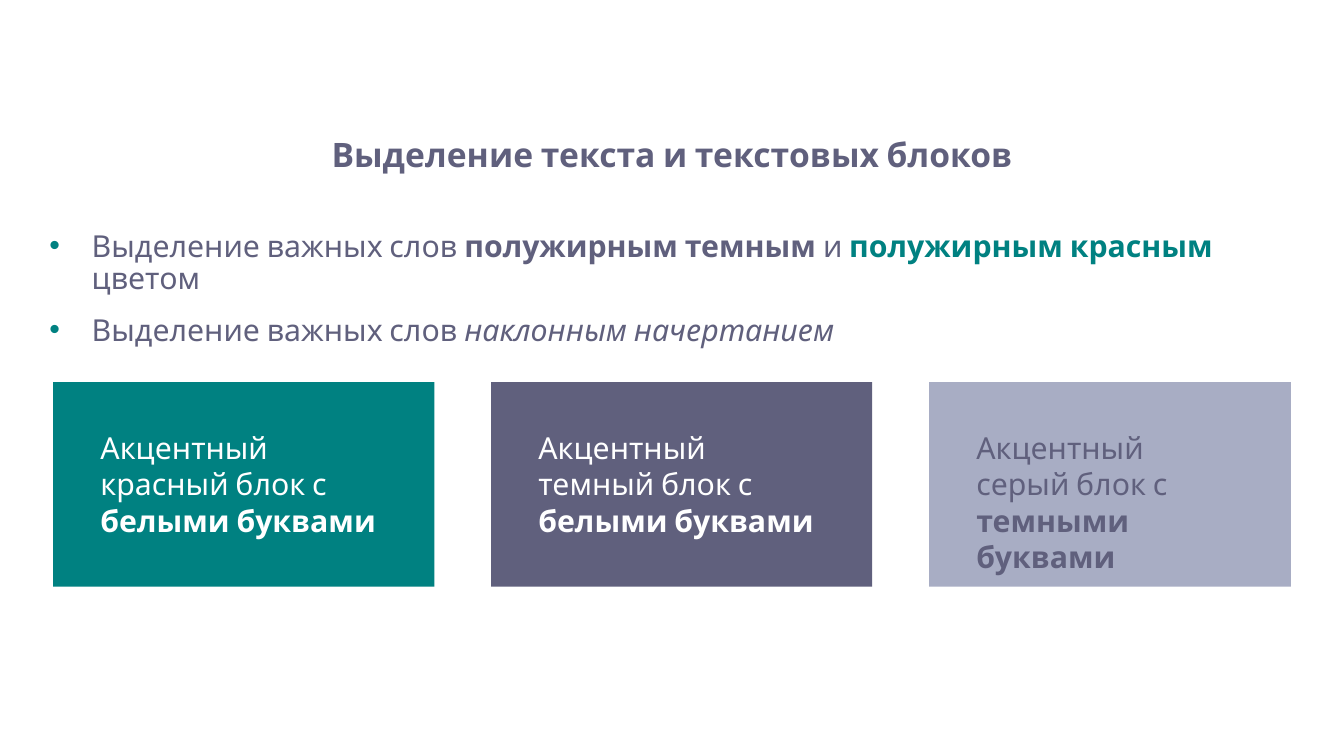
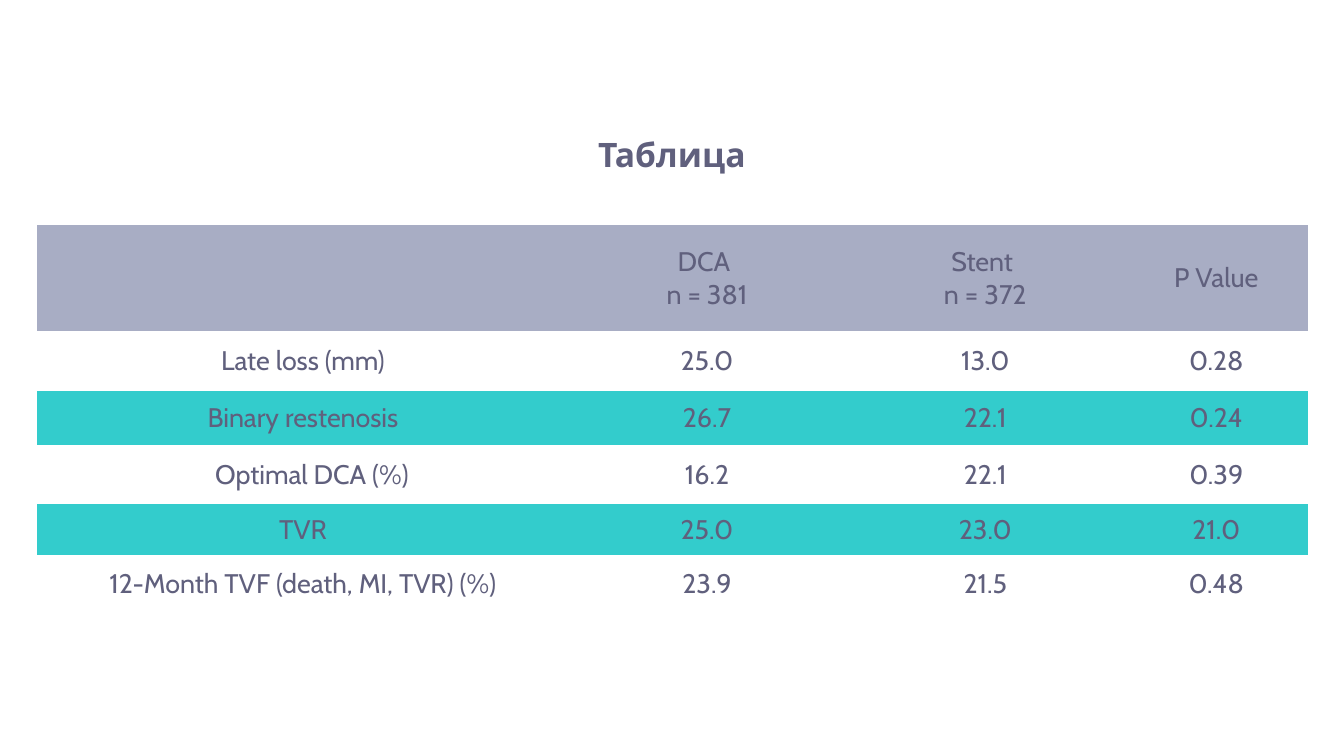
from dataclasses import dataclass

from lxml import etree
from pptx import Presentation
from pptx.dml.color import RGBColor
from pptx.enum.shapes import MSO_SHAPE
from pptx.enum.text import MSO_ANCHOR, PP_ALIGN
from pptx.oxml.ns import qn
from pptx.util import Inches, Pt

RECTANGLE = MSO_SHAPE.RECTANGLE
TOP, MIDDLE = MSO_ANCHOR.TOP, MSO_ANCHOR.MIDDLE
LEFT, CENTER = PP_ALIGN.LEFT, PP_ALIGN.CENTER
PLAIN_TABLE_STYLE = "{2D5ABB26-0587-4C30-8999-92F81FD0307C}"


@dataclass(frozen=True)
class Theme:
    """Colours, font and type sizes shared by the slides."""

    font: str = "Cabin"
    dark: str = "60607D"
    accent: str = "008181"
    grey: str = "A8ADC4"
    band: str = "33CCCC"
    white: str = "FFFFFF"
    title_size: int = 20
    body_size: int = 18
    table_size: int = 16


THEME = Theme()
SLIDE_SIZE = (11.11, 6.25)
TITLE_BOX = (0, 1, 11.11, 0.59)
BULLET_BOX = (0.31, 1.86, 10.53, 0.87)
CARD_BOX = (0.44, 3.16, 10.23, 1.69)
TABLE_BOX = (0.31, 1.86, 10.5, 3.21)
CARD_PITCH = 3.62
CARD_WIDTH = 3.15

BULLETS = [
    [
        ("Выделение важных слов ", {}),
        ("полужирным темным", {"bold": True}),
        (" и ", {}),
        ("полужирным красным ", {"bold": True, "color": THEME.accent}),
        ("цветом", {}),
    ],
    [("Выделение важных слов", {}), (" наклонным начертанием", {"italic": True})],
]
CARDS = [
    ("Акцентный красный блок с ", "белыми буквами", THEME.accent, THEME.white),
    ("Акцентный темный блок с ", "белыми буквами", THEME.dark, THEME.white),
    ("Акцентный серый блок с ", "темными буквами", THEME.grey, THEME.dark),
]
COLUMN_WIDTHS = [4.39, 2.29, 2.31, 1.51]
ROW_HEIGHTS = [0.88, 0.49, 0.45, 0.49, 0.42, 0.48]
ROWS = [
    ["", "DCA \vn = 381", "Stent \vn = 372", "P Value"],
    ["Late loss (mm)", "25.0", "13.0", "0.28"],
    ["Binary restenosis", "26.7", "22.1", "0.24"],
    ["Optimal DCA (%)", "16.2", "22.1", "0.39"],
    ["TVR", "25.0", "23.0", "21.0"],
    ["12-Month TVF (death, MI, TVR) (%)", "23.9", "21.5", "0.48"],
]
ROW_FILLS = [THEME.grey, None, THEME.band, None, THEME.band, None]
INDENTED_ROW = 3


def apply_format(target, values):
    """Set each named attribute of the target."""
    for name, value in values.items():
        setattr(target, name, value)


def style_font(font, size, color=THEME.dark, **values):
    """Give a font the theme typeface, a size, a colour and other values."""
    apply_format(font, {"name": THEME.font, "size": Pt(size), **values})
    font.color.rgb = RGBColor.from_string(color)


def set_frame(text_frame, horizontal, vertical, anchor=TOP):
    """Set wrapping, margins and anchor of a text frame."""
    apply_format(text_frame, {
        "word_wrap": True,
        "margin_left": Inches(horizontal),
        "margin_right": Inches(horizontal),
        "margin_top": Inches(vertical),
        "margin_bottom": Inches(vertical),
        "vertical_anchor": anchor,
    })


def add_runs(paragraph, runs, size, color=THEME.dark):
    """Add runs, each with the values in which it differs."""
    for text, values in runs:
        run = paragraph.add_run()
        run.text = text
        style_font(run.font, size, **{"color": color, **values})


def add_bullet(paragraph, color, indent):
    """Give a paragraph a coloured bullet and a hanging indent."""
    properties = paragraph._p.get_or_add_pPr()
    properties.set("marL", str(Inches(indent)))
    properties.set("indent", str(-Inches(indent)))
    bullet_color = etree.SubElement(properties, qn("a:buClr"))
    etree.SubElement(bullet_color, qn("a:srgbClr"), val=color)
    etree.SubElement(properties, qn("a:buFont"), typeface="Arial")
    etree.SubElement(properties, qn("a:buChar"), char="•")


def add_text_box(slide, box):
    """Add an empty text box and return its text frame."""
    return slide.shapes.add_textbox(*map(Inches, box)).text_frame


def add_title(slide, box, title):
    """Place the centred slide title."""
    text_frame = add_text_box(slide, box)
    set_frame(text_frame, 0.05, 0.05, MIDDLE)
    paragraph = text_frame.paragraphs[0]
    apply_format(paragraph, {"alignment": CENTER, "line_spacing": 0.9})
    add_runs(paragraph, [(title, {"bold": True})], THEME.title_size)


def add_bullets(slide, box, items):
    """Place a bulleted list."""
    text_frame = add_text_box(slide, box)
    set_frame(text_frame, 0.1, 0.05)
    for index, runs in enumerate(items):
        paragraph = text_frame.add_paragraph() if index else text_frame.paragraphs[0]
        add_bullet(paragraph, THEME.accent, 0.35)
        apply_format(paragraph, {
            "line_spacing": 0.9,
            "space_before": Pt(11.1 if index else 0),
        })
        add_runs(paragraph, runs, THEME.body_size)


def add_card(slide, box, lead, emphasis, fill, color):
    """Place one filled block with a bold ending."""
    card = slide.shapes.add_shape(RECTANGLE, *map(Inches, box))
    card.shadow.inherit = False
    card.fill.solid()
    card.fill.fore_color.rgb = RGBColor.from_string(fill)
    card.line.fill.background()
    set_frame(card.text_frame, 0.39, 0.39)
    paragraph = card.text_frame.paragraphs[0]
    paragraph.alignment = LEFT
    runs = [(lead, {}), (emphasis, {"bold": True})]
    add_runs(paragraph, runs, THEME.body_size, color)


def add_cards(slide, box, cards):
    """Place the row of blocks, the last one ending at the box edge."""
    left, top, width, height = box
    for index, card in enumerate(cards):
        offset = index * CARD_PITCH
        card_width = min(CARD_WIDTH, width - offset)
        add_card(slide, (left + offset, top, card_width, height), *card)


def fill_cell(cell, text, fill, indent):
    """Write and colour one table cell."""
    apply_format(cell, {
        "margin_left": Inches(0.11 + indent),
        "margin_right": Inches(0.11),
        "margin_top": Inches(0.06),
        "margin_bottom": Inches(0.06),
        "vertical_anchor": MIDDLE,
    })
    if fill:
        cell.fill.solid()
        cell.fill.fore_color.rgb = RGBColor.from_string(fill)
    else:
        cell.fill.background()
    cell.text_frame.paragraphs[0].text = text
    paragraph = cell.text_frame.paragraphs[0]
    paragraph.alignment = CENTER
    style_font(paragraph.font, THEME.table_size)
    for run in paragraph.runs:
        style_font(run.font, THEME.table_size)


def add_results_table(slide, box, rows):
    """Place the banded table of results."""
    frame = slide.shapes.add_table(len(rows), len(rows[0]), *map(Inches, box))
    table = frame.table
    apply_format(table, {"first_row": False, "horz_banding": False})
    table._tbl.tblPr.find(qn("a:tableStyleId")).text = PLAIN_TABLE_STYLE
    for column, width in zip(table.columns, COLUMN_WIDTHS):
        column.width = Inches(width)
    for row_index, (texts, fill) in enumerate(zip(rows, ROW_FILLS)):
        table.rows[row_index].height = Inches(ROW_HEIGHTS[row_index])
        for column_index, text in enumerate(texts):
            indented = (row_index, column_index) == (INDENTED_ROW, 0)
            cell = table.cell(row_index, column_index)
            fill_cell(cell, text, fill, 0.15 if indented else 0)


def add_titled_slide(presentation, title):
    """Add a blank slide with a title."""
    slide = presentation.slides.add_slide(presentation.slide_layouts[6])
    add_title(slide, TITLE_BOX, title)
    return slide


def main():
    """Build and save the presentation."""
    presentation = Presentation()
    width, height = map(Inches, SLIDE_SIZE)
    apply_format(presentation, {"slide_width": width, "slide_height": height})

    slide = add_titled_slide(presentation, "Выделение текста и текстовых блоков")
    add_bullets(slide, BULLET_BOX, BULLETS)
    add_cards(slide, CARD_BOX, CARDS)

    slide = add_titled_slide(presentation, "Таблица")
    add_results_table(slide, TABLE_BOX, ROWS)

    presentation.save("out.pptx")


if __name__ == "__main__":
    main()
